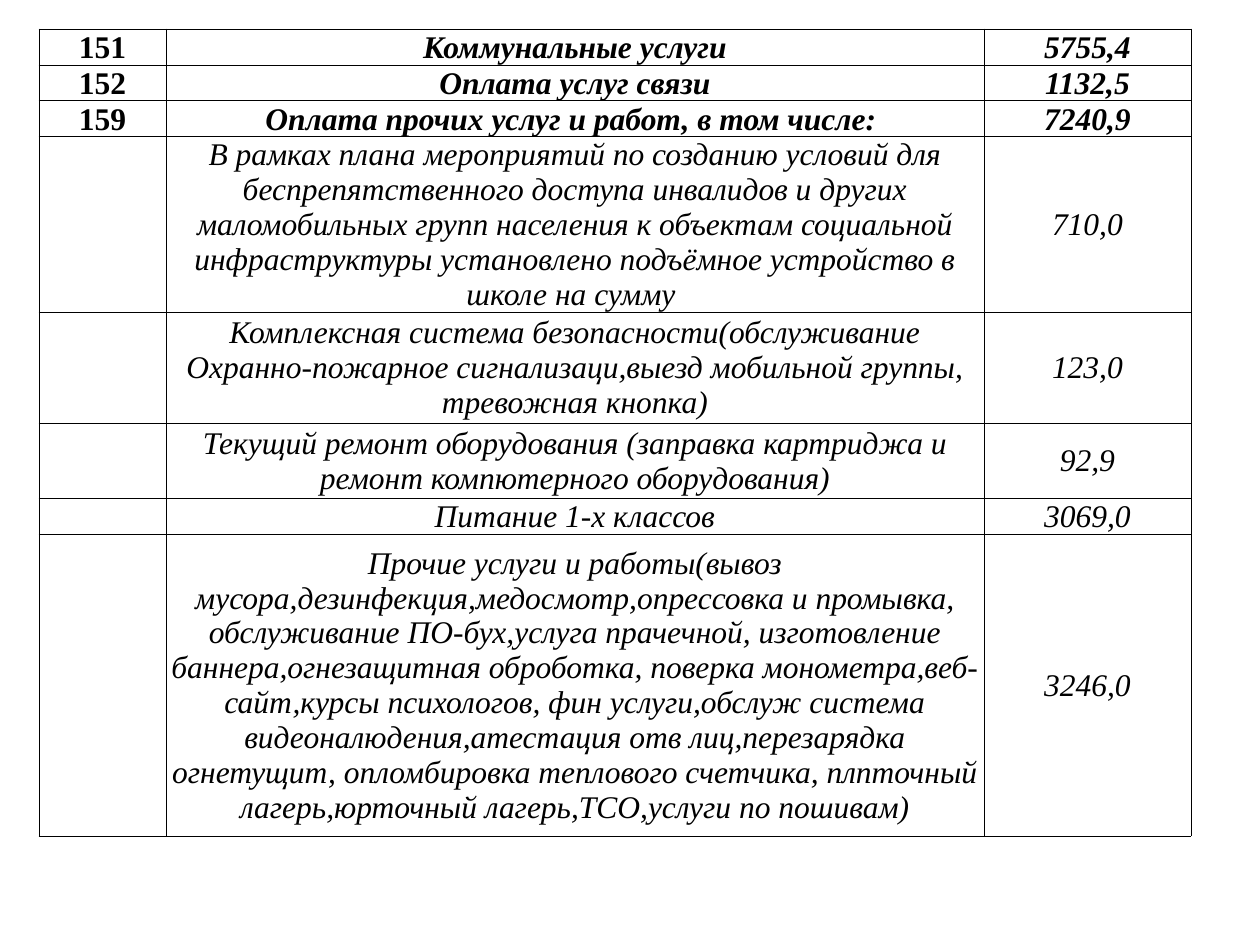
import pptx
import pptx.util
import pptx.dml.color
import pptx.enum.text
import pptx.oxml
import pptx.oxml.ns
from lxml import etree

PX = 914400 // 126
FONT = "Times New Roman"
COLORS = {"ink": "000000", "paper": "FFFFFF"}
WIDTHS = [127, 818, 207]
# code, service, sum, row height
ROWS = [
    ("151", "Коммунальные услуги", "5755,4", 29),
    ("152", "Оплата услуг связи", "1132,5", 29),
    ("159", "Оплата прочих услуг и работ, в том числе: ", "7240,9", 29),
    ("", "В рамках плана мероприятий по созданию условий для "
     "беспрепятственного доступа инвалидов и других маломобильных групп "
     "населения к объектам социальной инфраструктуры установлено "
     "подъёмное устройство в школе на сумму ", "710,0", 151),
    ("", "Комплексная система безопасности(обслуживание "
     "Охранно-пожарное сигнализаци,выезд мобильной группы, "
     "тревожная кнопка)", "123,0", 111),
    ("", "Текущий ремонт оборудования (заправка картриджа и "
     "ремонт компютерного оборудования)", "92,9", 75),
    ("", "Питание 1-х классов", "3069,0", 29),
    ("", "Прочие услуги и работы(вывоз "
     "мусора,дезинфекция,медосмотр,опрессовка и промывка, "
     "обслуживание ПО-бух,услуга прачечной, изготовление "
     "баннера,огнезащитная оброботка, поверка "
     "монометра,веб-сайт,курсы психологов, фин услуги,обслуж "
     "система видеоналюдения,атестация отв лиц,перезарядка "
     "огнетущит, опломбировка теплового счетчика, плпточный "
     "лагерь,юрточный лагерь,ТСО,услуги по пошивам)", "3246,0", 302),
]


def px(count):
    return pptx.util.Emu(count * PX)


def rgb(name):
    return pptx.dml.color.RGBColor.from_string(COLORS[name])


def add_node(parent, tag, **attrs):
    return etree.SubElement(parent, pptx.oxml.ns.qn(tag), **attrs)


def set_edges(cell):
    """Draw a thin line on all four sides; call before the fill is set."""
    props = cell._tc.get_or_add_tcPr()
    for side in ("L", "R", "T", "B"):
        line = add_node(props, f"a:ln{side}", w=str(pptx.util.Pt(0.5)))
        fill = add_node(line, "a:solidFill")
        add_node(fill, "a:srgbClr", val=COLORS["ink"])


def set_text(cell, text, bold, italic):
    cell.vertical_anchor = pptx.enum.text.MSO_ANCHOR.MIDDLE
    cell.margin_left = cell.margin_right = cell.margin_top = px(1)
    cell.margin_bottom = 0
    para = cell.text_frame.paragraphs[0]
    para.text = text
    para.alignment = pptx.enum.text.PP_ALIGN.CENTER
    for run in para.runs:
        font = run.font
        font.name, font.size = FONT, pptx.util.Pt(18)
        font.bold, font.italic = bold, italic
        font.color.rgb = rgb("ink")
    if not text:
        # keeps an empty cell from stretching its row
        add_node(para._p, "a:endParaRPr", sz="1200")


def add_costs(slide):
    heights = [row[-1] for row in ROWS]
    frame = slide.shapes.add_table(
        len(ROWS), len(WIDTHS), px(39), px(29),
        px(sum(WIDTHS)), px(sum(heights)))
    table = frame.table
    table.first_row = table.horz_banding = False
    for col, width in zip(table.columns, WIDTHS):
        col.width = px(width)
    for row, (*texts, height) in zip(table.rows, ROWS):
        row.height = px(height)
        for num, (cell, text) in enumerate(zip(row.cells, texts)):
            set_text(cell, text, bold=bool(texts[0]), italic=num > 0)
            set_edges(cell)
            if num:
                cell.fill.solid()
                cell.fill.fore_color.rgb = rgb("paper")
            else:
                cell.fill.background()


def main():
    deck = pptx.Presentation()
    deck.slide_width, deck.slide_height = px(1260), px(945)
    slide = deck.slides.add_slide(deck.slide_layouts[6])
    add_costs(slide)
    deck.save("out.pptx")


if __name__ == "__main__":
    main()
